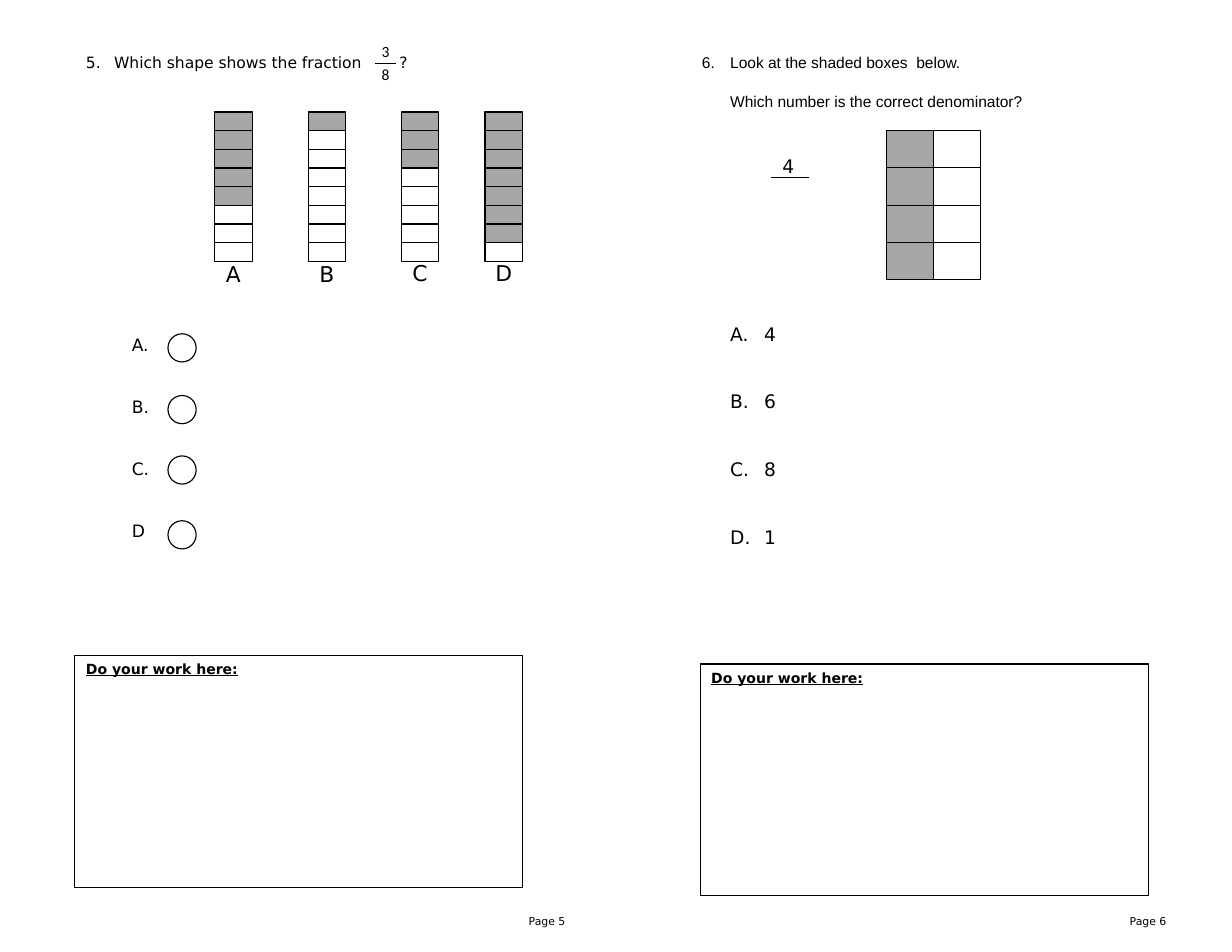
"""Build a two-page fractions worksheet slide with questions 5 and 6."""
from dataclasses import dataclass

from lxml import etree
from pptx import Presentation
from pptx.dml.color import RGBColor
from pptx.enum.shapes import MSO_CONNECTOR, MSO_SHAPE
from pptx.enum.text import MSO_ANCHOR, PP_ALIGN
from pptx.oxml import parse_xml
from pptx.oxml.ns import nsdecls, qn
from pptx.util import Cm, Pt

RECTANGLE, OVAL = MSO_SHAPE.RECTANGLE, MSO_SHAPE.OVAL
STRAIGHT = MSO_CONNECTOR.STRAIGHT
LEFT, CENTER, RIGHT = PP_ALIGN.LEFT, PP_ALIGN.CENTER, PP_ALIGN.RIGHT
TOP, MIDDLE = MSO_ANCHOR.TOP, MSO_ANCHOR.MIDDLE


@dataclass(frozen=True)
class Theme:
    ink: RGBColor = RGBColor(0, 0, 0)
    paper: RGBColor = RGBColor(255, 255, 255)
    shade: RGBColor = RGBColor(0xA6, 0xA6, 0xA6)
    font: str = "DejaVu Sans"
    plain_font: str = "Arial"
    fraction_font: str = "Calibri"
    page: Pt = Pt(7)
    work: Pt = Pt(9)
    question: Pt = Pt(10)
    option: Pt = Pt(11)
    answer: Pt = Pt(12)
    label: Pt = Pt(14)
    line: Pt = Pt(0.75)


theme = Theme()


def add_outlined(shapes, kind, left, top, width, height, fill=None):
    shape = shapes.add_shape(kind, Cm(left), Cm(top), Cm(width), Cm(height))
    shape.shadow.inherit = False
    shape.line.color.rgb = theme.ink
    shape.line.width = theme.line
    if fill is None:
        shape.fill.background()
    else:
        shape.fill.solid()
        shape.fill.fore_color.rgb = fill
    return shape


def write(frame, lines, size, font=theme.font, align=LEFT, gap=0, indent=0, numbering=None, start=1):
    frame.word_wrap = True
    frame.vertical_anchor = TOP
    for index, line in enumerate(lines):
        paragraph = frame.paragraphs[0] if index == 0 else frame.add_paragraph()
        paragraph.text = line
        paragraph.alignment = align
        paragraph.font.size = size
        paragraph.font.name = font
        paragraph.font.color.rgb = theme.ink
        if index:
            paragraph.space_before = Pt(gap)
        if numbering:
            properties = paragraph._p.get_or_add_pPr()
            properties.set("marL", str(Cm(indent)))
            properties.set("indent", str(-Cm(indent)))
            bullet = etree.SubElement(properties, qn("a:buAutoNum"), type=numbering)
            if start > 1:
                bullet.set("startAt", str(start))
            properties.insert_element_before(bullet, "a:tabLst", "a:defRPr", "a:extLst")
    return frame.paragraphs


presentation = Presentation()
presentation.slide_width, presentation.slide_height = Cm(27.94), Cm(21.59)
slide = presentation.slides.add_slide(presentation.slide_layouts[6])
shapes = slide.shapes

for page_label, left in (("Page 5", 11.34), ("Page 6", 24.97)):
    footer = shapes.add_textbox(Cm(left), Cm(20.62), Cm(1.73), Cm(0.64))
    write(footer.text_frame, [page_label], theme.page, align=RIGHT)

for left, top in ((1.7, 14.86), (15.88, 15.06)):
    work_area = add_outlined(shapes, RECTANGLE, left, top, 10.16, 5.26)
    heading = write(work_area.text_frame, ["Do your work here:"], theme.work)[0]
    heading.font.bold = True
    heading.font.underline = True

question_five = shapes.add_textbox(Cm(1.7), Cm(1.07), Cm(10.36), Cm(1.19))
prompt = write(question_five.text_frame, ["Which shape shows the fraction\t?"], theme.question,
               indent=0.64, numbering="arabicPeriod", start=5)[0]
tab_stops = parse_xml(f'<a:tabLst {nsdecls("a")}><a:tab pos="{Cm(7.11)}" algn="l"/></a:tabLst>')
prompt._p.get_or_add_pPr().insert_element_before(tab_stops, "a:defRPr", "a:extLst")

question_six = shapes.add_textbox(Cm(15.67), Cm(1.07), Cm(10.59), Cm(2.39))
prompts = write(question_six.text_frame,
                ["Look at the shaded boxes  below.", "Which number is the correct denominator?"],
                theme.question, theme.plain_font, gap=13, indent=0.64,
                numbering="arabicPeriod", start=6)
follow_up = prompts[1]._p.get_or_add_pPr()
follow_up.set("indent", "0")
follow_up.remove(follow_up.find(qn("a:buAutoNum")))

answers = shapes.add_textbox(Cm(16.31), Cm(7.19), Cm(4.45), Cm(5.38))
write(answers.text_frame, ["4", "6", "8", "1"], theme.answer, gap=29.2, indent=0.77,
      numbering="alphaUcPeriod")

options = shapes.add_textbox(Cm(2.74), Cm(7.01), Cm(2.34), Cm(5.89))
options.text_frame.margin_top = Cm(0.58)
write(options.text_frame, ["A.", "B.", "C.", "D"], theme.option, gap=26.7)
for top in (7.57, 8.97, 10.34, 11.81):
    add_outlined(shapes, OVAL, 3.81, top, 0.64, 0.64, theme.paper)

part_count, part_height = 8, 3.39 / 8
for letter, left, label_top, shaded in (("A", 4.87, 5.79, 5), ("B", 6.99, 5.79, 1),
                                        ("C", 9.1, 5.77, 3), ("D", 11, 5.77, 7)):
    bar = shapes.add_group_shape()
    for part in range(part_count):
        add_outlined(bar.shapes, RECTANGLE, left, 2.54 + part * part_height, 0.85, part_height,
                     theme.shade if part < shaded else None)
    label = shapes.add_textbox(Cm(left), Cm(label_top), Cm(0.85), Cm(0.86))
    label.text_frame.margin_left = label.text_frame.margin_right = 0
    write(label.text_frame, [letter], theme.label, align=CENTER)

fraction = shapes.add_table(2, 1, Cm(8.53), Cm(0.91), Cm(0.43), Cm(1.04)).table
fraction.first_row = fraction.horz_banding = False
for row, (digit, height, edge) in enumerate((("3", 0.53, "lnB"), ("8", 0.51, "lnT"))):
    fraction.rows[row].height = Cm(height)
    cell = fraction.cell(row, 0)
    cell.margin_left = cell.margin_right = cell.margin_top = Cm(0.03)
    cell.margin_bottom = 0
    write(cell.text_frame, [digit], theme.question, theme.fraction_font, CENTER)
    cell.vertical_anchor = MIDDLE
    cell.fill.background()
    border = parse_xml(f'<a:{edge} {nsdecls("a")} w="{Pt(0.5)}"><a:solidFill>'
                       f'<a:srgbClr val="{theme.ink}"/></a:solidFill></a:{edge}>')
    cell._tc.get_or_add_tcPr().insert(0, border)

box_width, box_height = 1.06, 3.39 / 4
boxes = shapes.add_group_shape()
for row in range(4):
    for column, fill in enumerate((theme.shade, theme.paper)):
        add_outlined(boxes.shapes, RECTANGLE, 20.11 + column * box_width,
                     2.96 + row * box_height, box_width, box_height, fill)

numerator = shapes.add_textbox(Cm(17.35), Cm(3.38), Cm(1.06), Cm(0.76))
write(numerator.text_frame, ["4"], theme.answer, align=CENTER)
fraction_line = shapes.add_connector(STRAIGHT, Cm(17.48), Cm(4.02), Cm(18.34), Cm(4.02))
fraction_line.line.color.rgb = theme.ink
fraction_line.line.width = theme.line
etree.SubElement(fraction_line._element.spPr, qn("a:effectLst"))

presentation.save("out.pptx")
